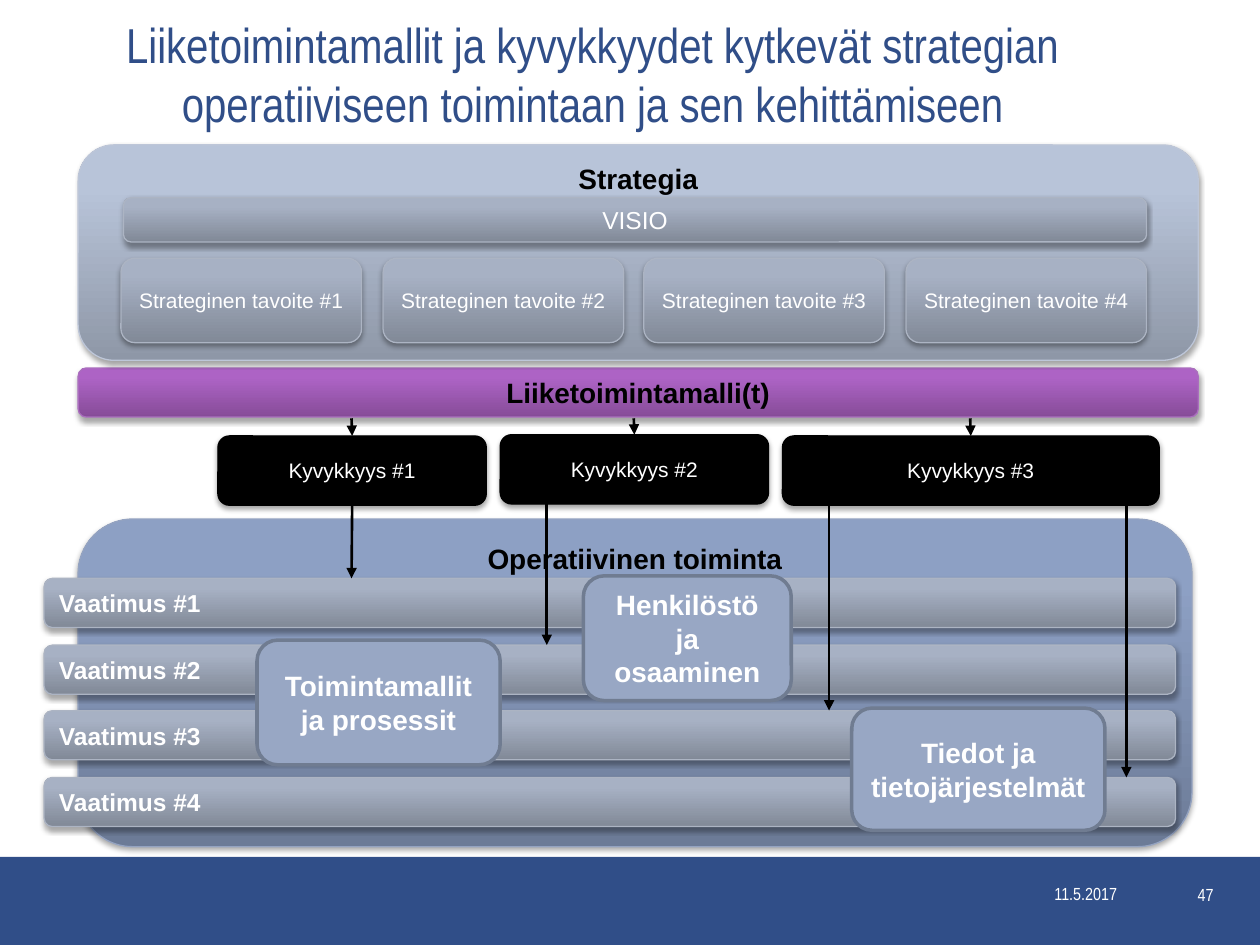
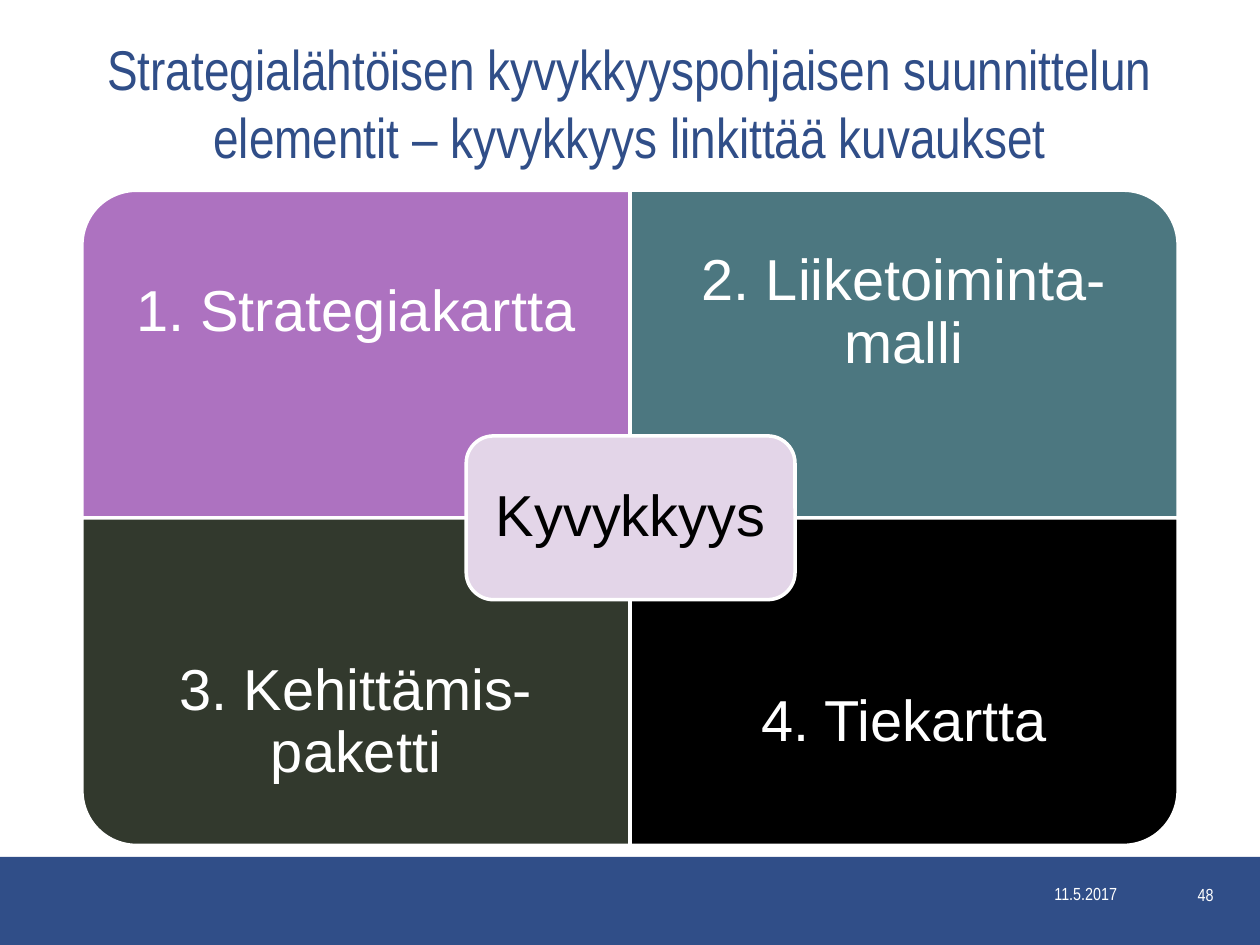
"""Builds two slides on how capabilities link strategy to operations."""
from lxml import etree
from pptx import Presentation
from pptx.dml.color import RGBColor
from pptx.enum.shapes import MSO_CONNECTOR, MSO_SHAPE
from pptx.enum.text import MSO_ANCHOR, MSO_AUTO_SIZE, PP_ALIGN
from pptx.oxml import parse_xml
from pptx.oxml.ns import nsdecls, qn
from pptx.util import Pt

RECT, ROUNDED = MSO_SHAPE.RECTANGLE, MSO_SHAPE.ROUNDED_RECTANGLE
ONE_ROUND = MSO_SHAPE.ROUND_1_RECTANGLE
STRAIGHT = MSO_CONNECTOR.STRAIGHT
LEFT, CENTER, RIGHT = PP_ALIGN.LEFT, PP_ALIGN.CENTER, PP_ALIGN.RIGHT
TOP, MIDDLE = MSO_ANCHOR.TOP, MSO_ANCHOR.MIDDLE
NO_FIT = MSO_AUTO_SIZE.NONE
TOP_SIDE, BOTTOM_SIDE = 0, 2

PX = 9144
NAVY, WHITE, BLACK = "304E88", "FFFFFF", "000000"
BODY_FONT, NARROW_FONT = "Arial", "Arial Narrow"
DATE = "11.5.2017"

PURPLE = (("864C98", "AD63C5", "AF62C8"), "AA6EBE")
PALE = (("8E97A7", "B8C4D9", "B8C4DB"), "BDC6D8")
BLUE = (("6C7B97", "8DA0C4", "8CA0C6"), "94A3C1")
GREY = (("818997", "A7B1C4", "A7B2C6"), "ACB4C3")
SOLID_BLACK = ((BLACK,), BLACK)

MODEL_SLIDE = {
    "title": "Liiketoimintamallit ja kyvykkyydet kytkevät strategian "
             "operatiiviseen toimintaan ja sen kehittämiseen",
    "title_box": (35, 14, 870, 88), "title_size": 28, "number": "47",
}
STRATEGY = ("Strategia", (62, 115, 889, 171))
VISION = ("VISIO", (98, 157, 812, 35))
GOALS = [f"Strateginen tavoite #{n}" for n in range(1, 5)]
BUSINESS_MODEL = ("Liiketoimintamalli(t)", (62, 292, 889, 39))
OPERATIONS = ("Operatiivinen toiminta", (62, 412, 884, 260))
CAPABILITIES = [
    ("Kyvykkyys #1", (173, 346, 213, 55)),
    ("Kyvykkyys #2", (397, 345, 213, 55)),
    ("Kyvykkyys #3", (621, 346, 299, 55)),
]
REQUIREMENTS = [f"Vaatimus #{n}" for n in range(1, 5)]
EFFECT_COLUMNS = [279, 434, 658, 894]
RESOURCES = [
    ("Toimintamallit ja prosessit", (204, 508, 193, 99)),
    ("Henkilöstö ja osaaminen", (463, 457, 165, 99)),
    ("Tiedot ja tietojärjestelmät", (676, 562, 201, 97)),
]

ELEMENTS_SLIDE = {
    "title": "Strategialähtöisen kyvykkyyspohjaisen suunnittelun "
             "elementit – kyvykkyys linkittää kuvaukset",
    "title_box": (65, 26, 870, 110), "title_size": 32, "number": "48",
}
QUADRANTS = [
    ("1. Strategiakartta", "AD72C0", 270),
    ("2. Liiketoiminta-malli", "4C7780", 0),
    ("3. Kehittämis-paketti", "32392D", 180),
    ("4. Tiekartta", BLACK, 90),
]
HUB = ("Kyvykkyys", (370, 346, 261, 130))


def rgb(value):
    return RGBColor.from_string(value)


def emu(lengths):
    return [round(length * PX) for length in lengths]


def spread(first, last, count):
    """Return evenly spaced positions from first to last."""
    return [round(first + (last - first) * i / (count - 1)) for i in range(count)]


def write(holder, text, size, color, font=BODY_FONT, bold=False, align=CENTER,
          anchor=MIDDLE, inset=None, line_spacing=None):
    frame = holder.text_frame
    frame.word_wrap = True
    frame.auto_size = NO_FIT
    frame.vertical_anchor = anchor
    if inset is not None:
        frame.margin_left = frame.margin_right = inset * PX
        frame.margin_top = frame.margin_bottom = inset * PX
    paragraph = frame.paragraphs[0]
    paragraph.alignment = align
    if line_spacing:
        paragraph.line_spacing = line_spacing
    run = paragraph.add_run()
    run.text = text
    run.font.size, run.font.name, run.font.bold = Pt(size), font, bold
    run.font.color.rgb = rgb(color)


def add_text(slide, box, text, size, color, **style):
    write(slide.shapes.add_textbox(*emu(box)), text, size, color, **style)


def add_flat(slide, preset, box, fill, line=None):
    shape = slide.shapes.add_shape(preset, *emu(box))
    shape.shadow.inherit = False
    shape.fill.solid()
    shape.fill.fore_color.rgb = rgb(fill)
    if line:
        shape.line.color.rgb = rgb(line)
        shape.line.width = Pt(2)
    else:
        shape.line.fill.background()
    return shape


def add_raised(slide, box, palette, text, size, color=WHITE, **style):
    """Add a rounded box with a vertical gradient and a soft shadow."""
    colors, line = palette
    shape = add_flat(slide, ROUNDED, box, colors[0], line)
    shape.line.width = Pt(0.75)
    properties = shape._element.spPr
    if len(colors) > 1:
        stops = "".join(f'<a:gs pos="{pos}"><a:srgbClr val="{stop}"/></a:gs>'
                        for pos, stop in zip((0, 80000, 100000), colors))
        gradient = parse_xml(
            f'<a:gradFill {nsdecls("a")} rotWithShape="1"><a:gsLst>{stops}</a:gsLst>'
            '<a:lin ang="16200000" scaled="0"/></a:gradFill>')
        properties.replace(properties.find(qn("a:solidFill")), gradient)
    properties.find(qn("a:effectLst")).append(parse_xml(
        f'<a:outerShdw {nsdecls("a")} blurRad="{Pt(3.1)}" dist="{Pt(1.8)}" '
        'dir="5400000" rotWithShape="0"><a:srgbClr val="000000">'
        '<a:alpha val="35000"/></a:srgbClr></a:outerShdw>'))
    write(shape, text, size, color, **style)
    return shape


def add_arrow(slide, start, end):
    arrow = slide.shapes.add_connector(STRAIGHT, *emu(start + end))
    arrow.line.color.rgb = rgb(BLACK)
    arrow.line.width = Pt(1.5)
    etree.SubElement(arrow.line._get_or_add_ln(), qn("a:tailEnd"), type="triangle")
    etree.SubElement(arrow._element.spPr, qn("a:effectLst"))
    return arrow


def start_slide(deck, content):
    """Add a slide with its title, bottom band, date and number."""
    slide = deck.slides.add_slide(deck.slide_layouts[5])
    title = slide.shapes.title
    title.left, title.top, title.width, title.height = emu(content["title_box"])
    write(title, content["title"], content["title_size"], NAVY, font=NARROW_FONT)
    add_flat(slide, RECT, (0, 680, 1000, 70), NAVY)
    add_text(slide, (827, 697, 93, 24), DATE, 10, WHITE, font=NARROW_FONT, align=LEFT)
    add_text(slide, (920, 697, 53, 23), content["number"], 10, WHITE,
             font=NARROW_FONT, align=RIGHT, anchor=TOP)
    return slide


def build_model_slide(deck):
    slide = start_slide(deck, MODEL_SLIDE)
    heading = {"size": 16, "color": BLACK, "bold": True}
    for (text, box), palette, anchor in ((BUSINESS_MODEL, PURPLE, MIDDLE),
                                         (STRATEGY, PALE, TOP),
                                         (OPERATIONS, BLUE, TOP)):
        add_raised(slide, box, palette, text, anchor=anchor, **heading)
    text, box = VISION
    add_raised(slide, box, GREY, text, 14)
    for goal, left in zip(GOALS, spread(96, 719, len(GOALS))):
        add_raised(slide, (left, 205, 191, 67), GREY, goal, 12)

    requirement_tops = spread(459, 617, len(REQUIREMENTS))
    for requirement, top in zip(REQUIREMENTS, requirement_tops):
        add_raised(slide, (35, top, 898, 39), GREY, requirement, 14,
                   bold=True, align=LEFT)

    capability_boxes = []
    for text, box in CAPABILITIES:
        capability = add_raised(slide, box, SOLID_BLACK, text, 12)
        capability_boxes.append(capability)
        center = box[0] + box[2] // 2
        arrow = add_arrow(slide, (center, 332), (center, box[1]))
        arrow.end_connect(capability, TOP_SIDE)

    effects = [add_arrow(slide, (column, 397), (column, top))
               for column, top in zip(EFFECT_COLUMNS, requirement_tops)]
    effects[0].begin_connect(capability_boxes[0], BOTTOM_SIDE)

    for text, box in RESOURCES:
        resource = add_flat(slide, ROUNDED, box, "98A7C4", "707C91")
        write(resource, text, 16, WHITE, bold=True)


def build_elements_slide(deck):
    slide = start_slide(deck, ELEMENTS_SLIDE)
    left, top, width, height, label_height = 65, 151, 435, 260, 195
    for index, (text, color, turn) in enumerate(QUADRANTS):
        row, column = divmod(index, 2)
        x, y = left + column * width, top + row * height
        if turn % 180:
            shift = (width - height) / 2
            box = (x + shift, y - shift, height, width)
        else:
            box = (x, y, width, height)
        add_flat(slide, ONE_ROUND, box, color, WHITE).rotation = turn
        label_top = y + row * (height - label_height)
        add_text(slide, (x, label_top, width, label_height), text, 33, WHITE,
                 inset=26, line_spacing=0.9)
    text, box = HUB
    hub = add_flat(slide, ROUNDED, box, "E3D5E8", WHITE)
    write(hub, text, 33, BLACK, inset=14, line_spacing=0.9)


def main():
    deck = Presentation()
    deck.slide_width, deck.slide_height = emu((1000, 750))
    build_model_slide(deck)
    build_elements_slide(deck)
    deck.save("out.pptx")


if __name__ == "__main__":
    main()
